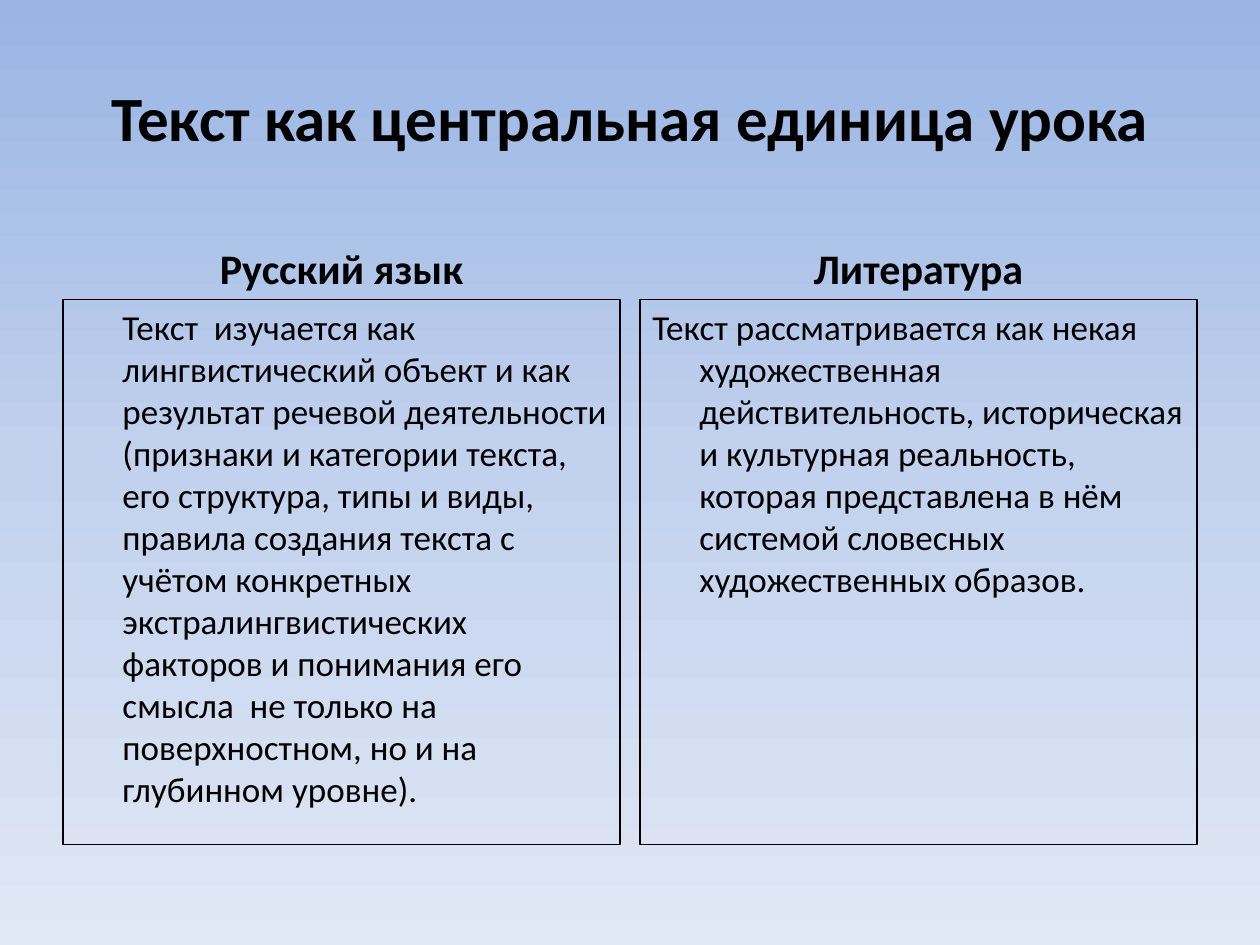
from copy import deepcopy
from dataclasses import dataclass

from pptx import Presentation
from pptx.dml.color import RGBColor
from pptx.enum.shapes import MSO_SHAPE
from pptx.enum.text import MSO_ANCHOR, PP_ALIGN
from pptx.oxml.ns import qn
from pptx.util import Cm, Pt

RECTANGLE = MSO_SHAPE.RECTANGLE
TOP, MIDDLE, BOTTOM = MSO_ANCHOR.TOP, MSO_ANCHOR.MIDDLE, MSO_ANCHOR.BOTTOM
LEFT, CENTER = PP_ALIGN.LEFT, PP_ALIGN.CENTER


@dataclass(frozen=True)
class Theme:
    font: str = "Calibri"
    ink: str = "000000"
    background: tuple = ((0, "9AB5E4"), (0.5, "C2D1ED"), (1, "E1E8F5"))
    title_size: int = 36
    heading_size: int = 24
    body_size: int = 20
    border: float = 0.75


THEME = Theme()
MARGIN = Cm(1.27)
COLUMN_WIDTH = Cm(11.23)
HANGING = Cm(0.95)

# Heading, text, first-line indent
COLUMNS = (
    ("Русский язык",
     "Текст  изучается как лингвистический объект и как результат речевой "
     "деятельности (признаки и категории текста, его структура, типы и виды, "
     "правила создания текста с учётом конкретных экстралингвистических "
     "факторов и понимания его смысла  не только на поверхностном, но и на "
     "глубинном уровне).", 0),
    ("Литература",
     "Текст рассматривается как некая художественная действительность, "
     "историческая и культурная реальность, которая представлена в нём "
     "системой словесных художественных образов.", -HANGING),
)


def paint_background(slide):
    """Fill the slide with the theme's gradient, running from top to bottom."""
    fill = slide.background.fill
    fill.gradient()
    fill.gradient_angle = 270
    stop_list = slide.element.find(".//" + qn("a:gsLst"))
    stop_list.append(deepcopy(stop_list[-1]))
    for stop, (position, color) in zip(fill.gradient_stops, THEME.background):
        stop.position = position
        stop.color.rgb = RGBColor.from_string(color)


def write_text(shape, text, *, size, bold=False, align=LEFT, anchor=TOP,
               space_before=0, margin_left=0, indent=0):
    frame = shape.text_frame
    frame.word_wrap = True
    frame.vertical_anchor = anchor
    para = frame.paragraphs[0]
    para.alignment = align
    para.space_before = Pt(space_before)
    properties = para._p.get_or_add_pPr()
    properties.set("marL", str(margin_left))
    properties.set("indent", str(indent))
    span = para.add_run()
    span.text = text
    span.font.name = THEME.font
    span.font.size = Pt(size)
    span.font.bold = bold
    span.font.color.rgb = RGBColor.from_string(THEME.ink)


def add_label(slide, text, left, top, width, height, **text_format):
    box = slide.shapes.add_textbox(left, top, width, height)
    write_text(box, text, bold=True, align=CENTER, **text_format)


def add_panel(slide, text, left, top, width, height, **text_format):
    """Add an outlined rectangle with text at its top left."""
    panel = slide.shapes.add_shape(RECTANGLE, left, top, width, height)
    panel.shadow.inherit = False
    panel.fill.background()
    panel.line.color.rgb = RGBColor.from_string(THEME.ink)
    panel.line.width = Pt(THEME.border)
    write_text(panel, text, **text_format)


def add_column(slide, left, heading, text, indent):
    add_label(slide, heading, left, Cm(4.26), COLUMN_WIDTH, Cm(1.78),
              size=THEME.heading_size, anchor=BOTTOM,
              space_before=0.2 * THEME.heading_size)
    add_panel(slide, text, left, Cm(6.04), COLUMN_WIDTH, Cm(10.98),
              size=THEME.body_size, space_before=0.2 * THEME.body_size,
              margin_left=HANGING, indent=indent)


def main():
    deck = Presentation()
    deck.slide_width, deck.slide_height = Cm(25.4), Cm(19.05)
    slide = deck.slides.add_slide(deck.slide_layouts[6])
    paint_background(slide)
    content_width = deck.slide_width - 2 * MARGIN
    add_label(slide, "Текст как центральная единица урока",
              MARGIN, Cm(0.76), content_width, Cm(3.18),
              size=THEME.title_size, anchor=MIDDLE)
    column_step = content_width - COLUMN_WIDTH
    for number, column in enumerate(COLUMNS):
        add_column(slide, MARGIN + number * column_step, *column)
    deck.save("out.pptx")


if __name__ == "__main__":
    main()
